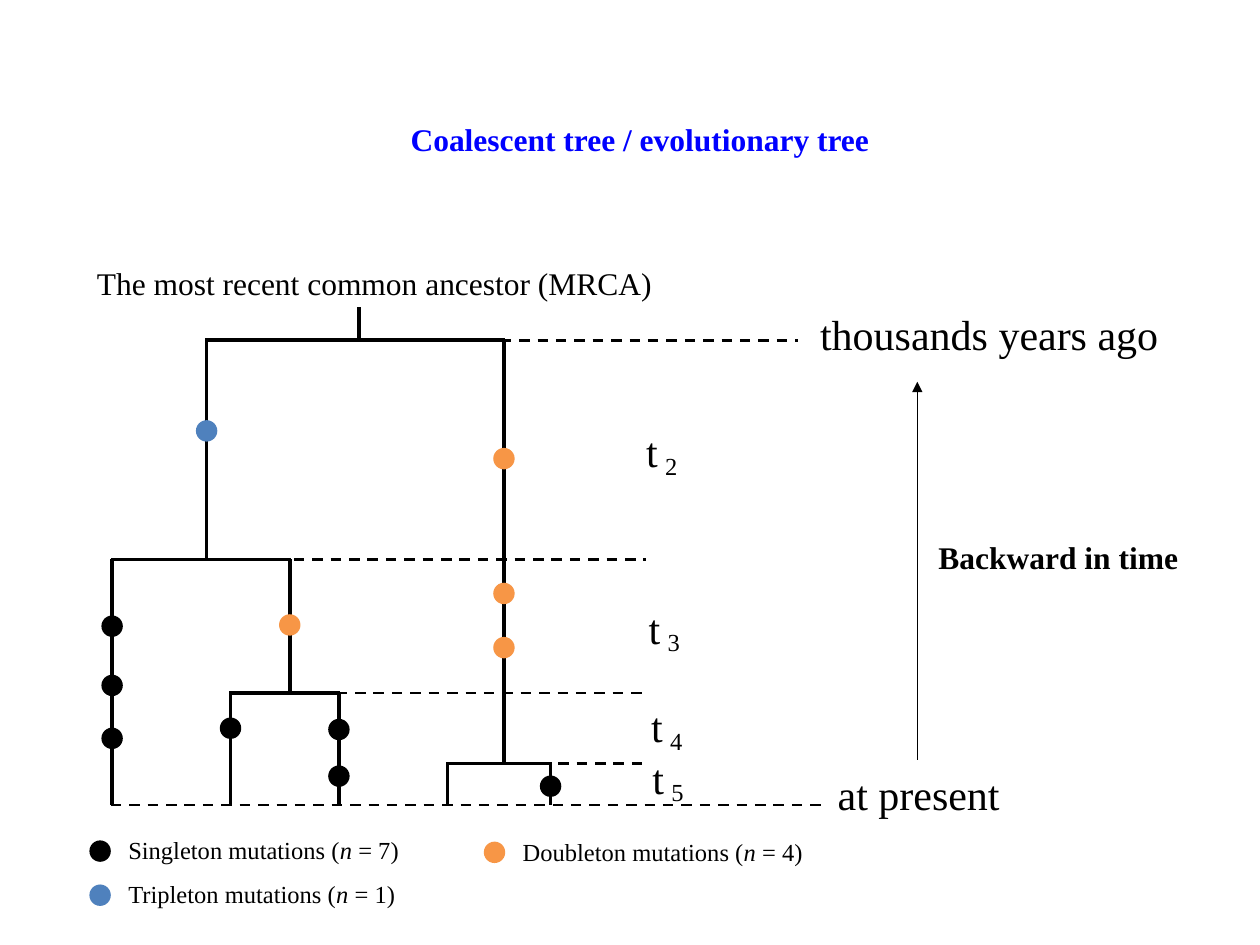
from lxml import etree
from pptx import Presentation
from pptx.dml.color import RGBColor
from pptx.enum.dml import MSO_LINE
from pptx.enum.shapes import MSO_CONNECTOR, MSO_SHAPE
from pptx.enum.text import MSO_AUTO_SIZE
from pptx.oxml.ns import qn
from pptx.util import Inches, Pt

COLORS = {
    "ink": "000000",
    "title": "0000FF",
    "singleton": "000000",
    "doubleton": "F79646",
    "tripleton": "4F81BD",
}
FONT = "Times New Roman"
DOT = 0.17

# Tree geometry, measured from the corner of the tree box
COLUMNS = {"a": 0, "ab": 0.75, "b": 0.94, "bc": 1.41, "c": 1.8,
           "d": 2.66, "de": 3.11, "e": 3.48}
LEVELS = {"root": 0, "t3": 1.74, "t4": 2.8, "t5": 3.36, "present": 3.69}


def rgb(color):
    return RGBColor.from_string(COLORS[color])


def add_line(slide, start, end, width=2, dashed=False, arrow=False):
    line = slide.shapes.add_connector(
        MSO_CONNECTOR.STRAIGHT, *(Inches(v) for v in (*start, *end)))
    line.line.color.rgb = rgb("ink")
    line.line.width = Pt(width)
    if dashed:
        line.line.dash_style = MSO_LINE.DASH
    if arrow:
        etree.SubElement(line.line._get_or_add_ln(), qn("a:tailEnd"), type="triangle")
    etree.SubElement(line._element.spPr, qn("a:effectLst"))


def add_text(slide, box, runs, size, color="ink", bold=False):
    """Write runs given as (text, italic) pairs, or one plain string."""
    frame = slide.shapes.add_textbox(*(Inches(v) for v in box)).text_frame
    frame.word_wrap = False
    frame.auto_size = MSO_AUTO_SIZE.SHAPE_TO_FIT_TEXT
    for text, italic in [(runs, False)] if isinstance(runs, str) else runs:
        run = frame.paragraphs[0].add_run()
        run.text = text
        formats = {"name": FONT, "size": Pt(size), "bold": bold, "italic": italic}
        for attribute, value in formats.items():
            setattr(run.font, attribute, value)
        run.font.color.rgb = rgb(color)


def add_mutation(slide, x, y, kind):
    """Draw a mutation dot centred on (x, y)."""
    dot = slide.shapes.add_shape(
        MSO_SHAPE.OVAL, Inches(x - DOT / 2), Inches(y - DOT / 2),
        Inches(DOT), Inches(DOT))
    dot.shadow.inherit = False
    dot.fill.solid()
    dot.fill.fore_color.rgb = rgb(kind)
    dot.line.fill.background()


def add_time_levels(slide, left, top):
    # Dashed line at each coalescence
    for level, start, end in [("present", -0.01, 5.68), ("t5", 2.81, 4.24),
                              ("t4", 1.49, 4.24), ("t3", 1.15, 4.24),
                              ("root", 2.5, 5.44)]:
        y = top + LEVELS[level]
        add_line(slide, (left + start, y), (left + end, y), 1.5, dashed=True)


def add_tree(slide, left, top):
    # Horizontal joins, a little longer than the span to close the corners
    for first, last, level in [("ab", "de", "root"), ("a", "bc", "t3"),
                               ("b", "c", "t4"), ("d", "e", "t5")]:
        y = top + LEVELS[level]
        add_line(slide, (left + COLUMNS[first] - 0.01, y),
                 (left + COLUMNS[last] + 0.01, y))

    # Vertical branches
    for column, upper, lower in [("ab", "root", "t3"), ("de", "root", "t5"),
                                 ("bc", "t3", "t4"), ("a", "t3", "present"),
                                 ("b", "t4", "present"), ("c", "t4", "present"),
                                 ("d", "t5", "present"), ("e", "t5", "present")]:
        x = left + COLUMNS[column]
        add_line(slide, (x, top + LEVELS[upper]), (x, top + LEVELS[lower]))

    # Stem of the common ancestor
    add_line(slide, (left + 1.96, top - 0.26), (left + 1.96, top))


def add_mutations(slide, left, top):
    mutations = {
        "singleton": [("a", 2.27), ("a", 2.74), ("a", 3.16), ("b", 3.08),
                      ("c", 3.09), ("c", 3.46), ("e", 3.54)],
        "doubleton": [("de", 0.94), ("de", 2.01), ("de", 2.44), ("bc", 2.26)],
        "tripleton": [("ab", 0.72)],
    }
    for kind, places in mutations.items():
        for column, y in places:
            add_mutation(slide, left + COLUMNS[column], top + y, kind)


def add_interval_labels(slide, left, top):
    for index, x, y in [("2", 0, 0), ("3", 0.02, 1.4),
                        ("4", 0.04, 2.18), ("5", 0.05, 2.59)]:
        add_text(slide, (left + x, top + y, 0.29, 0.5), "t", 24)
        add_text(slide, (left + x + 0.15, top + y + 0.2, 0.3, 0.33), index, 14)


def add_time_axis(slide, left, top):
    add_text(slide, (left, top, 2.89, 0.5), "thousands years ago", 24)
    add_text(slide, (left + 0.14, top + 3.65, 1.49, 0.5), "at present", 24)
    add_line(slide, (left + 0.87, top + 3.63), (left + 0.87, top + 0.63),
             0.75, arrow=True)
    add_text(slide, (left + 0.94, top + 1.82, 2.1, 0.4), "Backward in time", 18,
             bold=True)


def add_legend(slide, left, top):
    for kind, count, x, y, width in [("singleton", 7, 0, 0, 2.36),
                                     ("doubleton", 4, 3.13, 0.01, 2.44),
                                     ("tripleton", 1, 0, 0.35, 2.33)]:
        add_mutation(slide, left + x + DOT / 2, top + y + DOT / 2, kind)
        add_text(slide, (left + x + 0.21, top + y - 0.09, width, 0.34),
                 [(f"{kind.capitalize()} mutations (", False), ("n", True),
                  (f" = {count})", False)], 14)


def main():
    presentation = Presentation()
    presentation.slide_width, presentation.slide_height = Inches(10), Inches(7.5)
    slide = presentation.slides.add_slide(presentation.slide_layouts[6])

    tree_corner = (0.89, 2.7)
    add_time_levels(slide, *tree_corner)
    add_tree(slide, *tree_corner)
    add_interval_labels(slide, 5.03, 3.33)
    add_time_axis(slide, 6.41, 2.4)

    # Headings
    add_text(slide, (3.16, 0.9, 3.88, 0.4), "Coalescent tree / evolutionary tree",
             18, "title", bold=True)
    add_text(slide, (0.67, 2.05, 4.65, 0.4),
             "The most recent common ancestor (MRCA)", 18)

    add_mutations(slide, *tree_corner)
    add_legend(slide, 0.71, 6.67)
    presentation.save("out.pptx")


if __name__ == "__main__":
    main()
